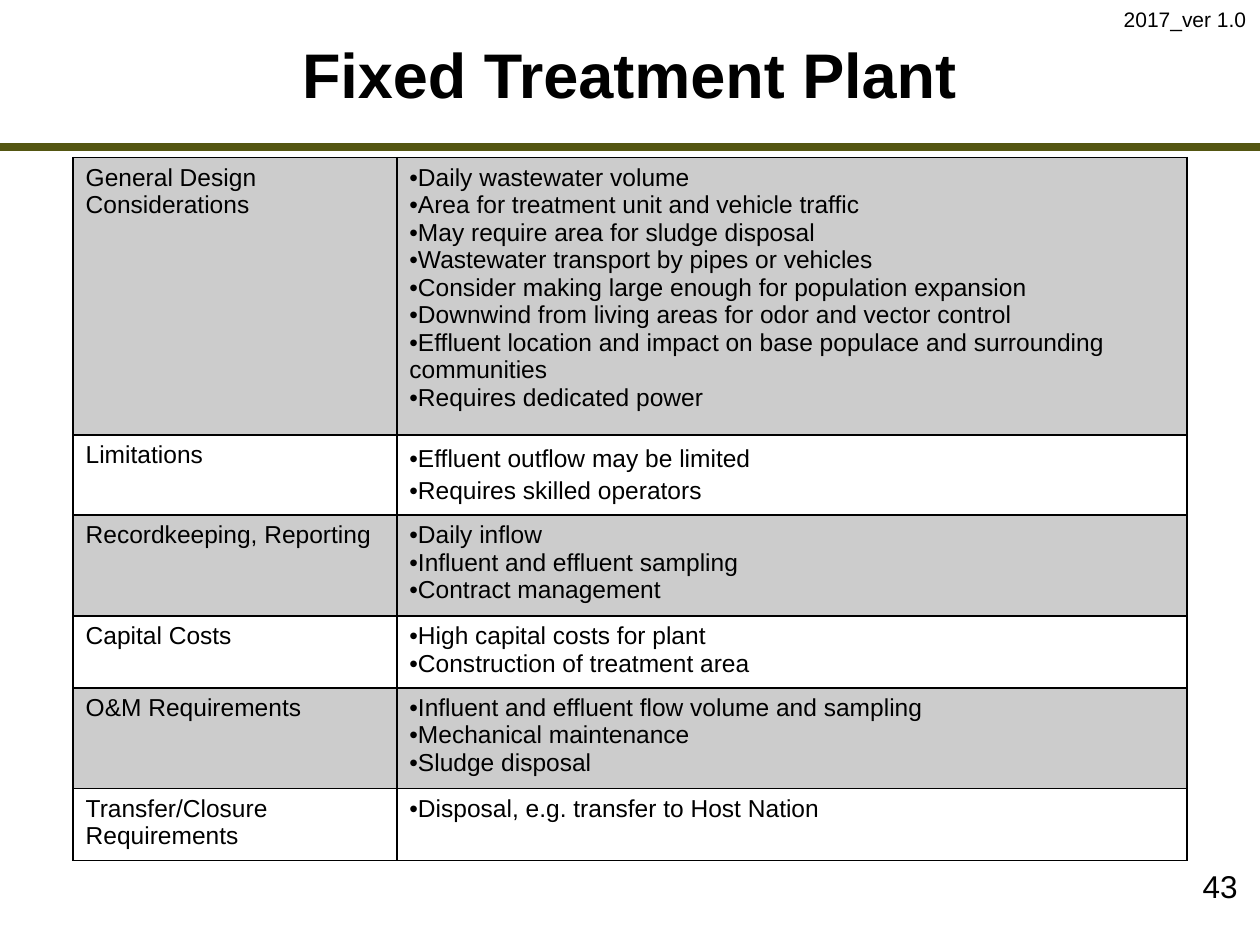
from lxml import etree
from pptx import Presentation
from pptx.dml.color import RGBColor
from pptx.enum.shapes import MSO_CONNECTOR
from pptx.enum.text import MSO_ANCHOR, PP_ALIGN
from pptx.oxml.ns import qn
from pptx.util import Inches, Pt

STRAIGHT = MSO_CONNECTOR.STRAIGHT
MIDDLE = MSO_ANCHOR.MIDDLE
LEFT, CENTER, RIGHT = PP_ALIGN.LEFT, PP_ALIGN.CENTER, PP_ALIGN.RIGHT

FONT = "Arial"
BLACK = "000000"
OLIVE = "545612"
COLUMN_WIDTHS = [2.57, 6.27]

# Row height, line spacing of the bullets, heading, bullets
ROWS = [
    (2.2, None, "General Design Considerations", [
        "Daily wastewater volume",
        "Area for treatment unit and vehicle traffic",
        "May require area for sludge disposal",
        "Wastewater transport by pipes or vehicles",
        "Consider making large enough for population expansion",
        "Downwind from living areas for odor and vector control",
        "Effluent location and impact on base populace and surrounding communities",
        "Requires dedicated power",
    ]),
    (0.63, 1.15, "Limitations", [
        "Effluent outflow may be limited",
        "Requires skilled operators",
    ]),
    (0.8, None, "Recordkeeping, Reporting", [
        "Daily inflow",
        "Influent and effluent sampling",
        "Contract management",
    ]),
    (0.57, None, "Capital Costs", [
        "High capital costs for plant",
        "Construction of treatment area",
    ]),
    (0.8, None, "O&M Requirements", [
        "Influent and effluent flow volume and sampling",
        "Mechanical maintenance",
        "Sludge disposal",
    ]),
    (0.57, None, "Transfer/Closure Requirements", [
        "Disposal, e.g. transfer to Host Nation",
    ]),
]


def color(value):
    return RGBColor.from_string(value)


def style(p, size, bold=False, align=LEFT):
    p.alignment = align
    for r in p.runs:
        r.font.name = FONT
        r.font.size = Pt(size)
        r.font.bold = bold
        r.font.color.rgb = color(BLACK)


def add_title(s, text):
    title = s.shapes.title
    title.left, title.top = Inches(1.16), Inches(0.17)
    title.width, title.height = Inches(7.67), Inches(0.83)
    tf = title.text_frame
    tf.text = text
    tf.vertical_anchor = MIDDLE
    style(tf.paragraphs[0], 36, True, CENTER)


def add_label(s, text, left, top, width, height, size, align=LEFT, wrap=True):
    box = s.shapes.add_textbox(Inches(left), Inches(top), Inches(width), Inches(height))
    tf = box.text_frame
    tf.word_wrap = wrap
    tf.text = text
    style(tf.paragraphs[0], size, align=align)


def add_rule(s, y):
    line = s.shapes.add_connector(STRAIGHT, 0, Inches(y), Inches(10), Inches(y))
    line.line.color.rgb = color(OLIVE)
    line.line.width = Pt(4.5)
    etree.SubElement(line._element.spPr, qn("a:effectLst"))


def add_bullet(p):
    pPr = p._p.get_or_add_pPr()
    pPr.set("marL", "0")
    pPr.set("indent", "0")
    etree.SubElement(pPr, qn("a:buFont")).set("typeface", FONT)
    etree.SubElement(pPr, qn("a:buChar")).set("char", "•")


def set_borders(cell):
    tcPr = cell._tc.get_or_add_tcPr()
    for i, side in enumerate(("a:lnL", "a:lnR", "a:lnT", "a:lnB")):
        ln = etree.Element(qn(side), w=str(Pt(1)))
        fill = etree.SubElement(ln, qn("a:solidFill"))
        etree.SubElement(fill, qn("a:srgbClr"), val=BLACK)
        tcPr.insert(i, ln)


def fill_cell(cell, lines, shaded, bulleted=False, spacing=None):
    if shaded:
        # Black at 20 % opacity
        cell.fill.solid()
        cell.fill.fore_color.rgb = color(BLACK)
        clr = cell._tc.tcPr.find(".//" + qn("a:srgbClr"))
        etree.SubElement(clr, qn("a:alpha"), val="20000")
    else:
        cell.fill.background()
    set_borders(cell)
    tf = cell.text_frame
    tf.text = "\n".join(lines)
    for p in tf.paragraphs:
        if bulleted:
            add_bullet(p)
        if spacing:
            p.line_spacing = spacing
        style(p, 14)


def add_considerations_table(s):
    height = sum(row[0] for row in ROWS)
    table = s.shapes.add_table(len(ROWS), 2, Inches(0.58), Inches(1.25),
                               Inches(sum(COLUMN_WIDTHS)), Inches(height)).table
    table.first_row = False
    table.horz_banding = False
    for column, width in zip(table.columns, COLUMN_WIDTHS):
        column.width = Inches(width)
    for i, (row_height, spacing, heading, bullets) in enumerate(ROWS):
        table.rows[i].height = Inches(row_height)
        shaded = i % 2 == 0
        fill_cell(table.cell(i, 0), [heading], shaded)
        fill_cell(table.cell(i, 1), bullets, shaded, True, spacing)


def main():
    prs = Presentation()
    prs.slide_width, prs.slide_height = Inches(10), Inches(7.5)
    s = prs.slides.add_slide(prs.slide_layouts[5])

    # Header
    add_rule(s, 1.17)
    add_title(s, "Fixed Treatment Plant")
    add_label(s, "2017_ver 1.0", 8.82, 0, 1.18, 0.3, 12, wrap=False)

    # Body and page number
    add_considerations_table(s)
    add_label(s, "43", 7.84, 6.83, 2.08, 0.5, 18, RIGHT)

    prs.save("out.pptx")


if __name__ == "__main__":
    main()
